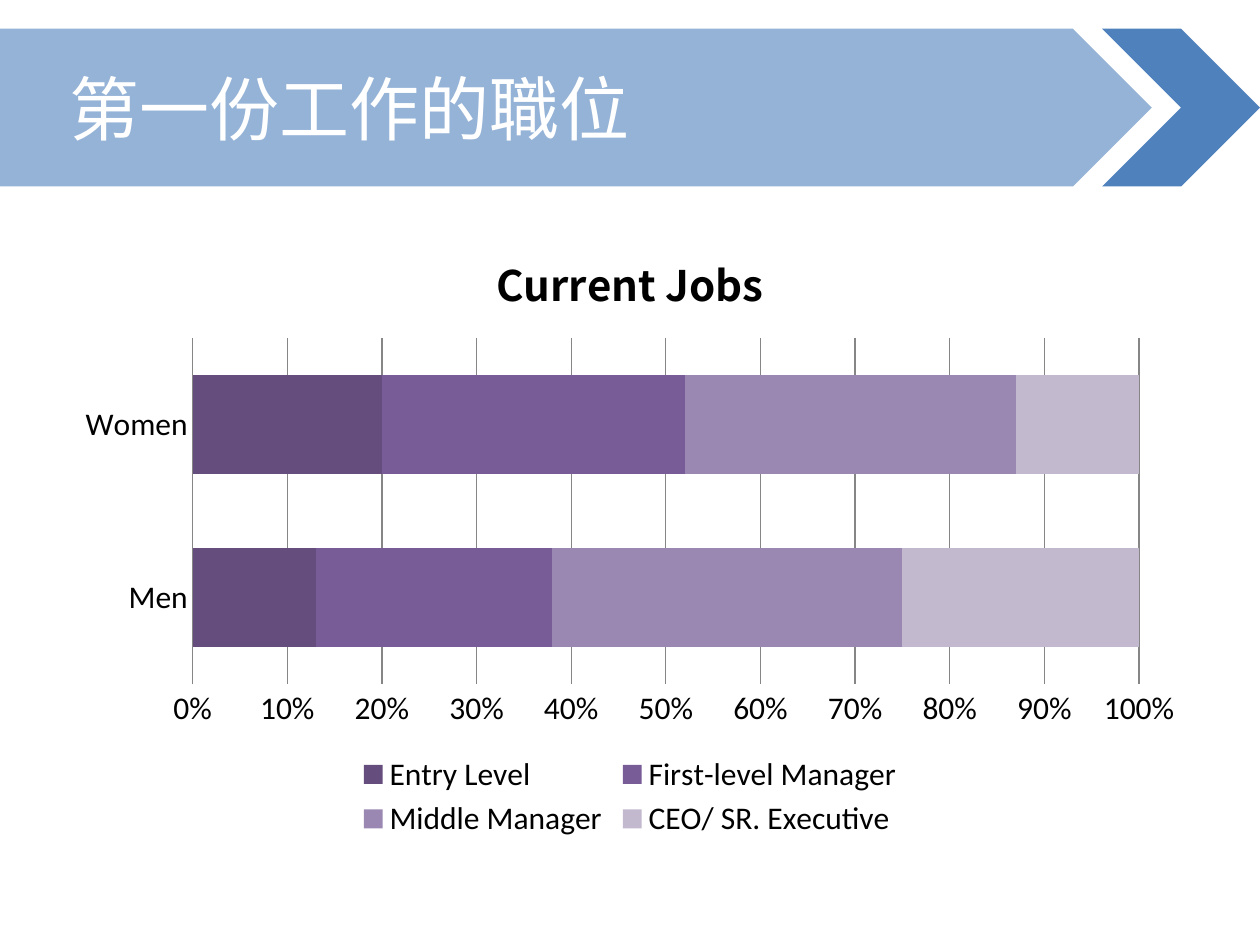
from dataclasses import dataclass

from lxml.etree import SubElement
from pptx import Presentation
from pptx.chart.data import CategoryChartData
from pptx.dml.color import RGBColor
from pptx.enum.chart import XL_CHART_TYPE as CT, XL_LEGEND_POSITION as LP, XL_TICK_MARK as TM
from pptx.enum.shapes import MSO_SHAPE as MS
from pptx.enum.text import MSO_ANCHOR as MA, PP_ALIGN as PA
from pptx.oxml.ns import qn
from pptx.util import Cm, Pt

COLORS = {
    "blue": "4F81BD", "white": "FFFFFF", "black": "000000", "grid": "868686",
    "entry": "654D7E", "first": "775C97", "middle": "9A88B3", "top": "C2B9CF",
}
LATIN, CJK = "Calibri", "Noto Sans CJK SC"
BAND_TOP, BAND_HEIGHT = 0.58, 3.18


@dataclass
class Arrow:
    kind: MS
    left: float
    width: float
    opacity: int = 100


@dataclass
class Level:
    name: str
    men: int
    women: int
    color: str


ARROWS = [Arrow(MS.PENTAGON, 0, 23.22, 60), Arrow(MS.CHEVRON, 22.22, BAND_HEIGHT)]
LEVELS = [
    Level("Entry Level", 13, 20, "entry"),
    Level("First-level Manager", 25, 32, "first"),
    Level("Middle Manager", 37, 35, "middle"),
    Level("CEO/ SR. Executive", 25, 13, "top"),
]


def rgb(name: str) -> RGBColor:
    """Return the named palette colour."""
    return RGBColor.from_string(COLORS[name])


def write(tf, text: str, *, size: int, color: str, font: str, bold: bool = False, align=None) -> None:
    """Write one formatted line into a text frame."""
    p = tf.paragraphs[0]
    p.alignment = align
    r = p.add_run()
    r.text = text
    f = r.font
    f.size, f.bold, f.name = Pt(size), bold, font
    f.color.rgb = rgb(color)
    SubElement(f._element, qn("a:ea")).set("typeface", font)


def draw_arrow(s, arrow: Arrow) -> None:
    """Draw one arrow of the title band."""
    sp = s.shapes.add_shape(arrow.kind, Cm(arrow.left), Cm(BAND_TOP), Cm(arrow.width), Cm(BAND_HEIGHT))
    sp.shadow.inherit = False
    sp.fill.solid()
    sp.fill.fore_color.rgb = rgb("blue")
    sp.line.fill.background()
    if arrow.opacity < 100:
        clr = sp._element.spPr.find(".//" + qn("a:srgbClr"))
        SubElement(clr, qn("a:alpha")).set("val", str(arrow.opacity * 1000))


def draw_title(s, text: str) -> None:
    """Place the title placeholder on the band."""
    sp = s.shapes.title
    sp.left, sp.top, sp.width, sp.height = Cm(1.41), Cm(BAND_TOP), Cm(20), Cm(BAND_HEIGHT)
    tf = sp.text_frame
    tf.margin_left = 0
    tf.word_wrap = True
    tf.vertical_anchor = MA.MIDDLE
    write(tf, text, size=40, color="white", font=CJK, align=PA.LEFT)
    s.shapes._spTree.append(sp._element)


def draw_chart(s, title: str, levels: list[Level]) -> None:
    """Draw the stacked share of job levels for men and women."""
    data = CategoryChartData()
    data.categories = ["Men", "Women"]
    for level in levels:
        data.add_series(level.name, (level.men, level.women))
    frame = s.shapes.add_chart(CT.BAR_STACKED_100, Cm(1.27), Cm(4.45), Cm(22.86), Cm(12.57), data)
    chart = frame.chart
    chart.font.size, chart.font.name = Pt(18), LATIN
    chart.font.color.rgb = rgb("black")
    chart.has_title = True
    write(chart.chart_title.text_frame, title, size=24, color="black", font=CJK, bold=True)
    chart.chart_title.include_in_layout = False
    chart.has_legend = True
    chart.legend.position = LP.BOTTOM
    chart.legend.include_in_layout = False

    plot = chart.plots[0]
    plot.gap_width, plot.overlap, plot.vary_by_categories = 75, 100, False
    for series, level in zip(plot.series, levels):
        series.format.fill.solid()
        series.format.fill.fore_color.rgb = rgb(level.color)

    cat, val = chart.category_axis, chart.value_axis
    for axis in (cat, val):
        axis.major_tick_mark = axis.minor_tick_mark = TM.NONE
    cat.format.line.color.rgb = rgb("grid")
    val.format.line.fill.background()
    val.has_major_gridlines = True
    val.major_gridlines.format.line.color.rgb = rgb("grid")
    val.tick_labels.number_format = "0%"
    val.tick_labels.number_format_is_linked = False


def main() -> None:
    """Build and save the slide."""
    prs = Presentation()
    prs.slide_width, prs.slide_height = Cm(25.4), Cm(19.05)
    s = prs.slides.add_slide(prs.slide_layouts[5])
    draw_chart(s, "Current Jobs", LEVELS)
    for arrow in ARROWS:
        draw_arrow(s, arrow)
    draw_title(s, "第一份工作的職位")
    prs.save("out.pptx")


if __name__ == "__main__":
    main()
